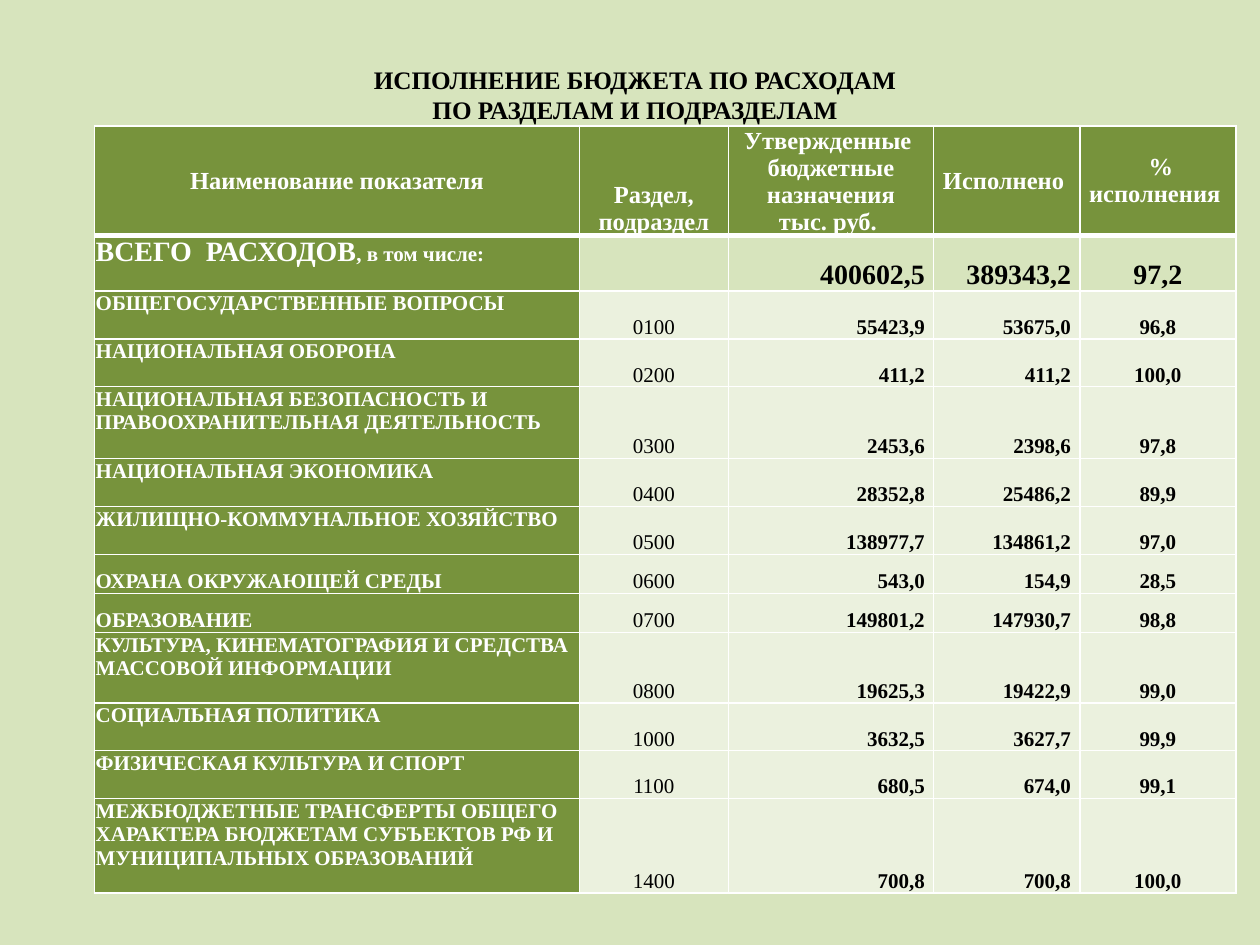
import pptx
import pptx.util
import pptx.dml.color
import pptx.enum.text
import pptx.oxml
import pptx.oxml.ns
from dataclasses import dataclass
from typing import Any

Inches = pptx.util.Inches
Pt = pptx.util.Pt
Color = pptx.dml.color.RGBColor
Align = pptx.enum.text.PP_ALIGN
Anchor = pptx.enum.text.MSO_ANCHOR

FONT = "Times New Roman"
WHITE = Color(0xFF, 0xFF, 0xFF)
BLACK = Color(0, 0, 0)
GREEN = Color(0x77, 0x93, 0x3C)
LIGHT = Color(0xD7, 0xE4, 0xBD)
PALE = Color(0xEB, 0xF1, 0xDE)


@dataclass
class Item:
    name: str
    code: str
    plan: str
    fact: str
    share: str
    height: float = 0.38
    anchor: Any = Anchor.TOP


TITLE = "ИСПОЛНЕНИЕ БЮДЖЕТА ПО РАСХОДАМ\vПО РАЗДЕЛАМ И ПОДРАЗДЕЛАМ"
WIDTHS = [3.85, 1.18, 1.63, 1.16, 1.24]
HEADS = [
    ("Наименование показателя", Anchor.MIDDLE),
    ("Раздел, подраздел", Anchor.BOTTOM),
    ("Утвержденные  бюджетные назначения\nтыс. руб. ", Anchor.BOTTOM),
    ("Исполнено ", Anchor.MIDDLE),
    (" % исполнения ", Anchor.MIDDLE),
]
TOTAL = Item("ВСЕГО  РАСХОДОВ", "", "400602,5", "389343,2", "97,2", 0.44)
ITEMS = [
    Item("ОБЩЕГОСУДАРСТВЕННЫЕ ВОПРОСЫ", "0100", "55423,9", "53675,0", "96,8"),
    Item("НАЦИОНАЛЬНАЯ ОБОРОНА", "0200", "411,2", "411,2", "100,0"),
    Item("НАЦИОНАЛЬНАЯ БЕЗОПАСНОСТЬ И ПРАВООХРАНИТЕЛЬНАЯ ДЕЯТЕЛЬНОСТЬ",
         "0300", "2453,6", "2398,6", "97,8", 0.57),
    Item("НАЦИОНАЛЬНАЯ ЭКОНОМИКА", "0400", "28352,8", "25486,2", "89,9"),
    Item("ЖИЛИЩНО-КОММУНАЛЬНОЕ ХОЗЯЙСТВО", "0500", "138977,7", "134861,2", "97,0"),
    Item("ОХРАНА ОКРУЖАЮЩЕЙ СРЕДЫ", "0600", "543,0", "154,9", "28,5", 0.31, Anchor.BOTTOM),
    Item("ОБРАЗОВАНИЕ", "0700", "149801,2", "147930,7", "98,8", 0.31, Anchor.BOTTOM),
    Item("КУЛЬТУРА, КИНЕМАТОГРАФИЯ И СРЕДСТВА МАССОВОЙ ИНФОРМАЦИИ",
         "0800", "19625,3", "19422,9", "99,0", 0.56),
    Item("СОЦИАЛЬНАЯ ПОЛИТИКА", "1000", "3632,5", "3627,7", "99,9"),
    Item("ФИЗИЧЕСКАЯ КУЛЬТУРА И СПОРТ", "1100", "680,5", "674,0", "99,1"),
    Item("МЕЖБЮДЖЕТНЫЕ ТРАНСФЕРТЫ ОБЩЕГО ХАРАКТЕРА БЮДЖЕТАМ СУБЪЕКТОВ РФ "
         "И МУНИЦИПАЛЬНЫХ ОБРАЗОВАНИЙ", "1400", "700,8", "700,8", "100,0", 0.75),
]


def write(frame: Any, text: str, size: float = 12, color: Any = BLACK,
          bold: bool = True, align: Any = Align.CENTER, tail: str = "") -> None:
    frame.word_wrap = True
    frame.text = text
    for para in frame.paragraphs:
        para.alignment = align
        para.font.size = Pt(size)
        for run in para.runs:
            style(run.font, size, color, bold)
    if tail:
        run = frame.paragraphs[-1].add_run()
        run.text = tail
        style(run.font, 12, color, bold)


def style(font: Any, size: float, color: Any, bold: bool) -> None:
    font.name = FONT
    font.size = Pt(size)
    font.bold = bold
    font.color.rgb = color


def dress(cell: Any, fill: Any, anchor: Any, side: float = 0.07,
          top: float = 0, base: float = 1) -> None:
    cell.margin_left = cell.margin_right = Inches(side)
    cell.margin_top = Inches(top)
    cell.margin_bottom = 0
    cell.vertical_anchor = anchor
    props = cell._tc.get_or_add_tcPr()
    space = pptx.oxml.ns.nsdecls("a")
    for edge, width in (("L", 1), ("R", 1), ("T", 1), ("B", base)):
        props.append(pptx.oxml.parse_xml(
            f'<a:ln{edge} {space} w="{Pt(width)}"><a:solidFill>'
            f'<a:srgbClr val="{WHITE}"/></a:solidFill></a:ln{edge}>'))
    cell.fill.solid()
    cell.fill.fore_color.rgb = fill


def head(table: Any) -> None:
    table.rows[0].height = Inches(0.87)
    for col, (text, anchor) in enumerate(HEADS):
        cell = table.cell(0, col)
        write(cell.text_frame, text, size=14, color=WHITE)
        dress(cell, GREEN, anchor, base=3)


def fill(table: Any, row: int, item: Item) -> None:
    total = item is TOTAL
    size = 16 if total else 12
    table.rows[row].height = Inches(item.height)
    cell = table.cell(row, 0)
    write(cell.text_frame, item.name, size=size, color=WHITE, align=Align.LEFT,
          tail=", в том числе:" if total else "")
    dress(cell, GREEN, item.anchor, side=0.01, top=0.01)
    values = [(item.code, Align.CENTER), (item.plan, Align.RIGHT),
              (item.fact, Align.RIGHT), (item.share, Align.CENTER)]
    for col, (text, align) in enumerate(values, 1):
        cell = table.cell(row, col)
        write(cell.text_frame, text, size=size, bold=col > 1, align=align)
        dress(cell, LIGHT if total else PALE, Anchor.BOTTOM)


def main() -> None:
    deck = pptx.Presentation()
    deck.slide_width, deck.slide_height = Inches(10), Inches(7.5)
    slide = deck.slides.add_slide(deck.slide_layouts[6])
    slide.background.fill.solid()
    slide.background.fill.fore_color.rgb = LIGHT

    rows = [TOTAL, *ITEMS]
    high = 0.87 + sum(item.height for item in rows)
    table = slide.shapes.add_table(
        len(rows) + 1, len(WIDTHS), Inches(0.75), Inches(1),
        Inches(sum(WIDTHS)), Inches(high)).table
    for col, width in zip(table.columns, WIDTHS):
        col.width = Inches(width)
    head(table)
    for row, item in enumerate(rows, 1):
        fill(table, row, item)

    frame = slide.shapes.add_textbox(
        Inches(0.79), Inches(0.44), Inches(8.5), Inches(0.55)).text_frame
    frame.margin_top = frame.margin_bottom = 0
    frame.vertical_anchor = Anchor.BOTTOM
    write(frame, TITLE, size=14.4)
    deck.save("out.pptx")


if __name__ == "__main__":
    main()
